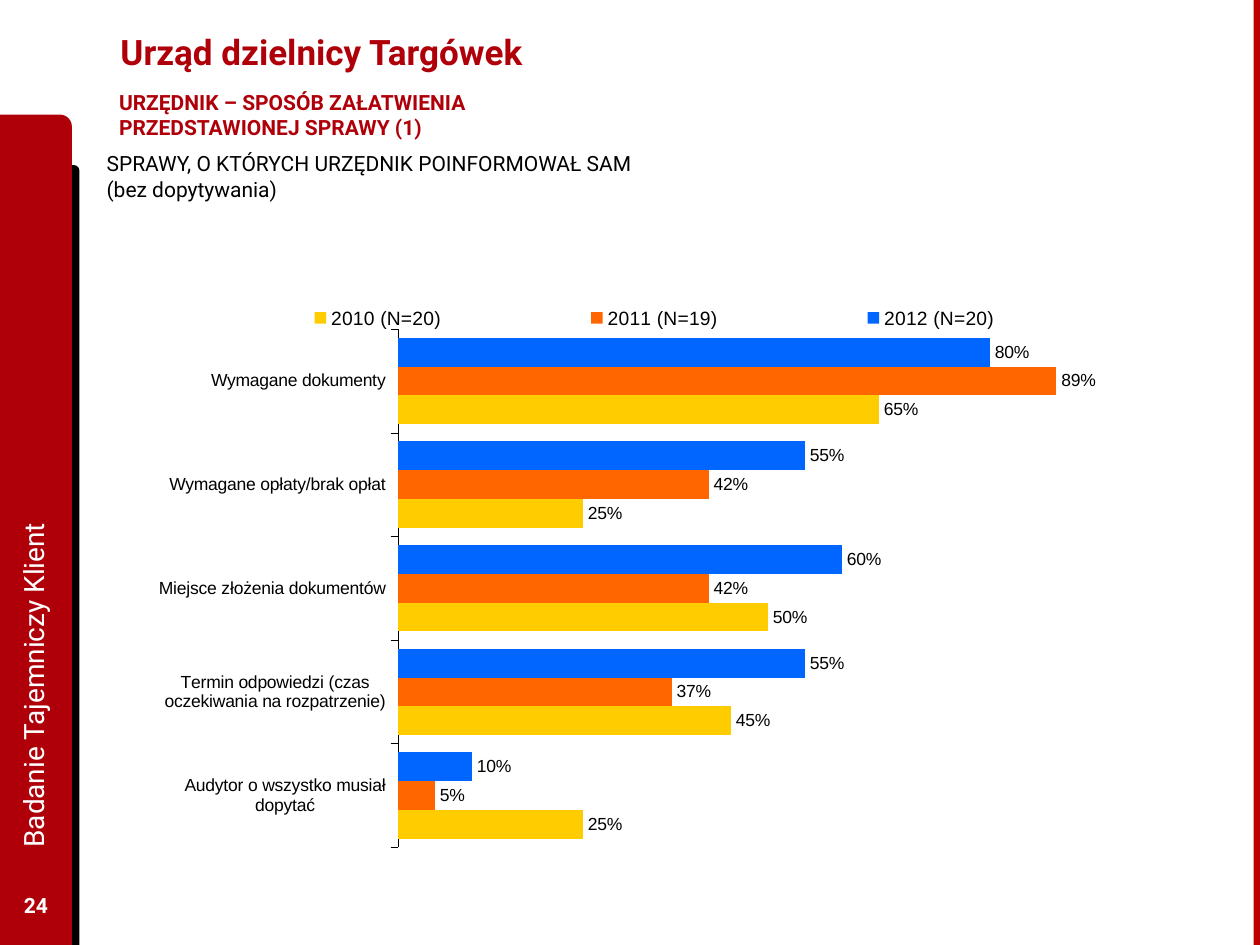
from lxml import etree
from pptx import Presentation
from pptx.chart.data import CategoryChartData
from pptx.dml.color import RGBColor
from pptx.enum.chart import (XL_CHART_TYPE, XL_LABEL_POSITION,
                             XL_LEGEND_POSITION, XL_TICK_MARK)
from pptx.enum.shapes import MSO_SHAPE
from pptx.enum.text import MSO_ANCHOR, PP_ALIGN
from pptx.oxml.ns import qn
from pptx.util import Cm, Pt

BAR = XL_CHART_TYPE.BAR_CLUSTERED
OUT_END = XL_LABEL_POSITION.OUTSIDE_END
RIGHT = XL_LEGEND_POSITION.RIGHT
TICK_OUT, NO_TICK = XL_TICK_MARK.OUTSIDE, XL_TICK_MARK.NONE
RECT, ROUND = MSO_SHAPE.RECTANGLE, MSO_SHAPE.ROUND_1_RECTANGLE
TOP, MIDDLE = MSO_ANCHOR.TOP, MSO_ANCHOR.MIDDLE
LEFT, CENTER = PP_ALIGN.LEFT, PP_ALIGN.CENTER

RED = RGBColor(0xAF, 0x00, 0x0A)
EDGE = RGBColor(0xBD, 0x00, 0x00)
BLACK = RGBColor(0x00, 0x00, 0x00)
WHITE = RGBColor(0xFF, 0xFF, 0xFF)
BLUE = RGBColor(0x00, 0x66, 0xFF)
ORANGE = RGBColor(0xFF, 0x66, 0x00)
YELLOW = RGBColor(0xFF, 0xCC, 0x00)


def add_text(text, box, size, color, bold=False, anchor=TOP, align=LEFT):
    shape = slide.shapes.add_textbox(*map(Cm, box))
    frame = shape.text_frame
    frame.word_wrap = True
    frame.vertical_anchor = anchor
    frame.text = text
    for par in frame.paragraphs:
        par.alignment = align
        for run in par.runs:
            run.font.name = "Roboto"
            run.font.size = Pt(size)
            run.font.bold = bold
            run.font.color.rgb = color
    return shape


def set_layout(parent, after, target, x, y, w, h):
    """Place a chart part by fractions of the chart area."""
    for old in parent.findall(qn("c:layout")):
        parent.remove(old)
    layout = etree.Element(qn("c:layout"))
    manual = etree.SubElement(layout, qn("c:manualLayout"))
    rules = [("xMode", "edge"), ("yMode", "edge"),
             ("x", x), ("y", y), ("w", w), ("h", h)]
    if target:
        rules.insert(0, ("layoutTarget", target))
    for tag, val in rules:
        etree.SubElement(manual, qn("c:" + tag)).set("val", str(val))
    if after is None:
        parent.insert(0, layout)
    else:
        after.addnext(layout)


prs = Presentation()
prs.slide_width, prs.slide_height = Cm(25.4), Cm(19.05)
slide = prs.slides.add_slide(prs.slide_layouts[6])

# Side bands and right edge
for kind, box, color in [
    (ROUND, (0.99, 3.33, 0.61, 15.72), BLACK),
    (ROUND, (0, 2.31, 1.45, 16.74), RED),
    (RECT, (25.27, 0, 0.13, 19.05), EDGE),
]:
    band = slide.shapes.add_shape(kind, *map(Cm, box))
    band.shadow.inherit = False
    band.fill.solid()
    band.fill.fore_color.rgb = color
    band.line.fill.background()

# Headings
add_text("Urząd dzielnicy Targówek", (2.18, 0.13, 19.74, 1.83),
         20, RED, True, MIDDLE)
sub = add_text("URZĘDNIK – SPOSÓB ZAŁATWIENIA PRZEDSTAWIONEJ SPRAWY (1)",
               (1.9, 1.68, 9.78, 0.84), 12, RED, True)
sub.text_frame.word_wrap = False
sub.text_frame.margin_left = sub.text_frame.margin_right = Cm(0.5)
add_text("SPRAWY, O KTÓRYCH URZĘDNIK POINFORMOWAŁ SAM \v(bez dopytywania)",
         (1.9, 2.92, 12.19, 1.27), 12, BLACK)

# Chart
data = CategoryChartData(number_format="0%")
data.categories = [
    "Wymagane dokumenty",
    "Wymagane opłaty/brak opłat",
    "Miejsce złożenia dokumentów",
    "Termin odpowiedzi (czas oczekiwania na rozpatrzenie)",
    "Audytor o wszystko musiał dopytać",
]
data.add_series("2012 (N=20)", (0.8, 0.55, 0.6, 0.55, 0.1))
data.add_series("2011 (N=19)", (0.89, 0.42, 0.42, 0.37, 0.05))
data.add_series("2010 (N=20)", (0.65, 0.25, 0.5, 0.45, 0.25))
chart = slide.shapes.add_chart(
    BAR, Cm(3.05), Cm(5.72), Cm(19.89), Cm(11.48), data).chart
chart.has_title = False
chart.font.name = "Arial"
chart.font.size = Pt(10)
chart.font.color.rgb = BLACK

# Bars and labels
plot = chart.plots[0]
plot.gap_width = 60
plot.overlap = 0
plot.vary_by_categories = False
for series, color in zip(plot.series, (BLUE, ORANGE, YELLOW)):
    series.format.fill.solid()
    series.format.fill.fore_color.rgb = color
    labels = series.data_labels
    labels.show_value = True
    labels.number_format = "0%"
    labels.number_format_is_linked = False
    labels.position = OUT_END
    labels.font.name = "Arial"
    labels.font.size = Pt(10)
    labels.font.color.rgb = BLACK

# Axes
cat = chart.category_axis
cat.reverse_order = True
cat.has_major_gridlines = False
cat.major_tick_mark, cat.minor_tick_mark = TICK_OUT, NO_TICK
cat.format.line.color.rgb = BLACK
cat.format.line.width = Pt(0.25)
val = chart.value_axis
val.visible = False
val.has_major_gridlines = False
val.minimum_scale, val.maximum_scale, val.major_unit = 0, 1, 0.2

# Legend and plot area
chart.has_legend = True
legend = chart.legend
legend.position = RIGHT
legend.include_in_layout = False
legend.font.name = "Arial"
legend.font.size = Pt(11)
legend.font.color.rgb = BLACK
key = chart.element.find(".//" + qn("c:legend"))
set_layout(key, key.find(qn("c:legendPos")), None, 0.02, 0.02, 0.98, 0.08)
area = chart.element.find(".//" + qn("c:plotArea"))
set_layout(area, None, "inner", 0.25, 0.08, 0.75, 0.91)

# Page number and side title
add_text("24", (0, 17.73, 1.45, 1.02), 12, WHITE, True, MIDDLE, CENTER)
side = add_text("Badanie Tajemniczy Klient", (-6.65, 9.37, 14.63, 1.3),
                16, WHITE, False, MIDDLE)
side.rotation = 270

prs.save("out.pptx")
